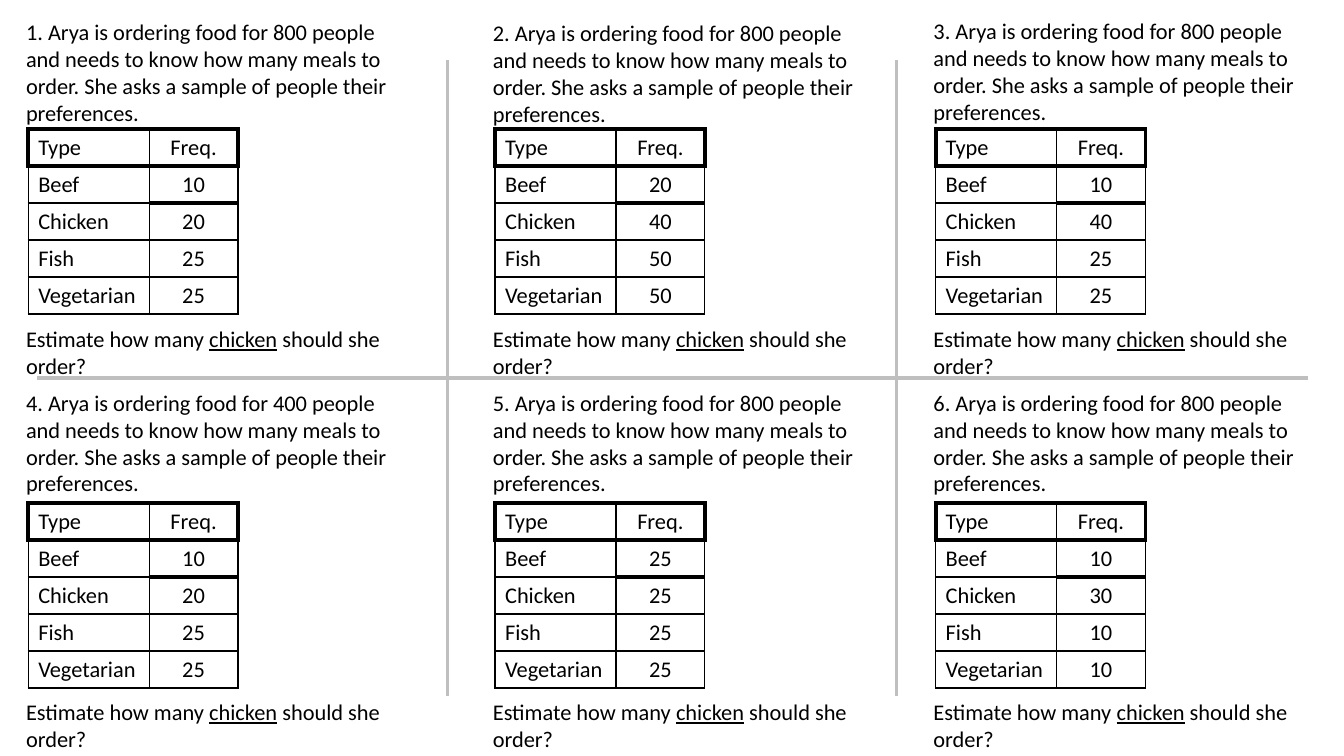
import lxml.etree
import pptx
import pptx.dml.color
import pptx.enum.shapes
import pptx.enum.text
import pptx.oxml.ns
import pptx.util

PX = 9144  # 100 px to the inch
FONT = "Calibri"
FONT_SIZE = 16
COLORS = {"ink": "000000", "divider": "BFBFBF"}
THIN, THICK = 1, 3

MEALS = ["Beef", "Chicken", "Fish", "Vegetarian"]
COLUMN_WIDTHS = [120, 88]
ROW_HEIGHT = 36
PANEL_LEFTS = [16, 479, 916]
TABLE_INDENT = 12
# For each row of panels: prompt tops, table top, question top
PANEL_ROWS = [([13, 14, 12], 128, 318), ([381, 381, 381], 499, 688)]
# Number of people and the frequency of each meal
PROBLEMS = [
    (800, [10, 20, 25, 25]),
    (800, [20, 40, 50, 50]),
    (800, [10, 40, 25, 25]),
    (400, [10, 20, 25, 25]),
    (800, [25, 25, 25, 25]),
    (800, [10, 30, 10, 10]),
]
DIVIDERS = [(37, 375, 1297, 375), (444, 60, 444, 690), (889, 60, 889, 690)]


def write_runs(paragraph, runs):
    """Add (text, underlined) pairs to the paragraph in the slide's font."""
    for text, underlined in runs:
        run = paragraph.add_run()
        run.text = text
        run.font.name = FONT
        run.font.size = pptx.util.Pt(FONT_SIZE)
        run.font.underline = underlined
        run.font.color.rgb = pptx.dml.color.RGBColor.from_string(COLORS["ink"])


def add_border(cell, side, points):
    """Draw one side (L, R, T or B) of a table cell."""
    line = lxml.etree.SubElement(
        cell._tc.get_or_add_tcPr(), pptx.oxml.ns.qn(f"a:ln{side}"),
        w=str(pptx.util.Pt(points)), cap="flat", cmpd="sng", algn="ctr")
    fill = lxml.etree.SubElement(line, pptx.oxml.ns.qn("a:solidFill"))
    lxml.etree.SubElement(fill, pptx.oxml.ns.qn("a:srgbClr"), val=COLORS["ink"])
    lxml.etree.SubElement(line, pptx.oxml.ns.qn("a:prstDash"), val="solid")


presentation = pptx.Presentation()
presentation.slide_width = 1333 * PX
presentation.slide_height = 750 * PX
slide = presentation.slides.add_slide(presentation.slide_layouts[6])

for start_x, start_y, end_x, end_y in DIVIDERS:
    divider = slide.shapes.add_connector(
        pptx.enum.shapes.MSO_CONNECTOR.STRAIGHT,
        start_x * PX, start_y * PX, end_x * PX, end_y * PX)
    divider.line.color.rgb = pptx.dml.color.RGBColor.from_string(COLORS["divider"])
    divider.line.width = pptx.util.Pt(2.5)
    lxml.etree.SubElement(divider._element.spPr, pptx.oxml.ns.qn("a:effectLst"))

for index, (people, frequencies) in enumerate(PROBLEMS):
    panel_row, panel_column = divmod(index, len(PANEL_LEFTS))
    left = PANEL_LEFTS[panel_column]
    prompt_tops, table_top, question_top = PANEL_ROWS[panel_row]

    prompt = (f"{index + 1}. Arya is ordering food for {people} people and needs to know "
              "how many meals to order. She asks a sample of people their preferences.")
    question = [("Estimate how many ", False), ("chicken", True),
                (" should she order?", False)]
    for top, width, height, runs in [
        (prompt_tops[panel_column], 391, 118, [(prompt, False)]),
        (question_top, 408, 64, question),
    ]:
        text_box = slide.shapes.add_textbox(left * PX, top * PX, width * PX, height * PX)
        text_box.text_frame.word_wrap = True
        text_box.text_frame.auto_size = pptx.enum.text.MSO_AUTO_SIZE.SHAPE_TO_FIT_TEXT
        write_runs(text_box.text_frame.paragraphs[0], runs)

    rows = [("Type", "Freq."), *zip(MEALS, map(str, frequencies))]
    table = slide.shapes.add_table(
        len(rows), len(COLUMN_WIDTHS), (left + TABLE_INDENT) * PX, table_top * PX,
        sum(COLUMN_WIDTHS) * PX, len(rows) * ROW_HEIGHT * PX).table
    table.first_row = False
    table.horz_banding = False
    for column, width in zip(table.columns, COLUMN_WIDTHS):
        column.width = width * PX
    for row_index, texts in enumerate(rows):
        table.rows[row_index].height = ROW_HEIGHT * PX
        for column_index, text in enumerate(texts):
            cell = table.cell(row_index, column_index)
            is_header = row_index == 0
            is_frequency = column_index == 1
            # The header is boxed; a heavy rule also follows the first frequency
            thick_sides = {
                "L": is_header and not is_frequency,
                "R": is_header and is_frequency,
                "T": row_index <= 1 or (row_index == 2 and is_frequency),
                "B": is_header or (row_index == 1 and is_frequency),
            }
            for side, is_thick in thick_sides.items():
                add_border(cell, side, THICK if is_thick else THIN)
            cell.fill.background()
            paragraph = cell.text_frame.paragraphs[0]
            if is_frequency:
                paragraph.alignment = pptx.enum.text.PP_ALIGN.CENTER
            write_runs(paragraph, [(text, False)])

presentation.save("out.pptx")
